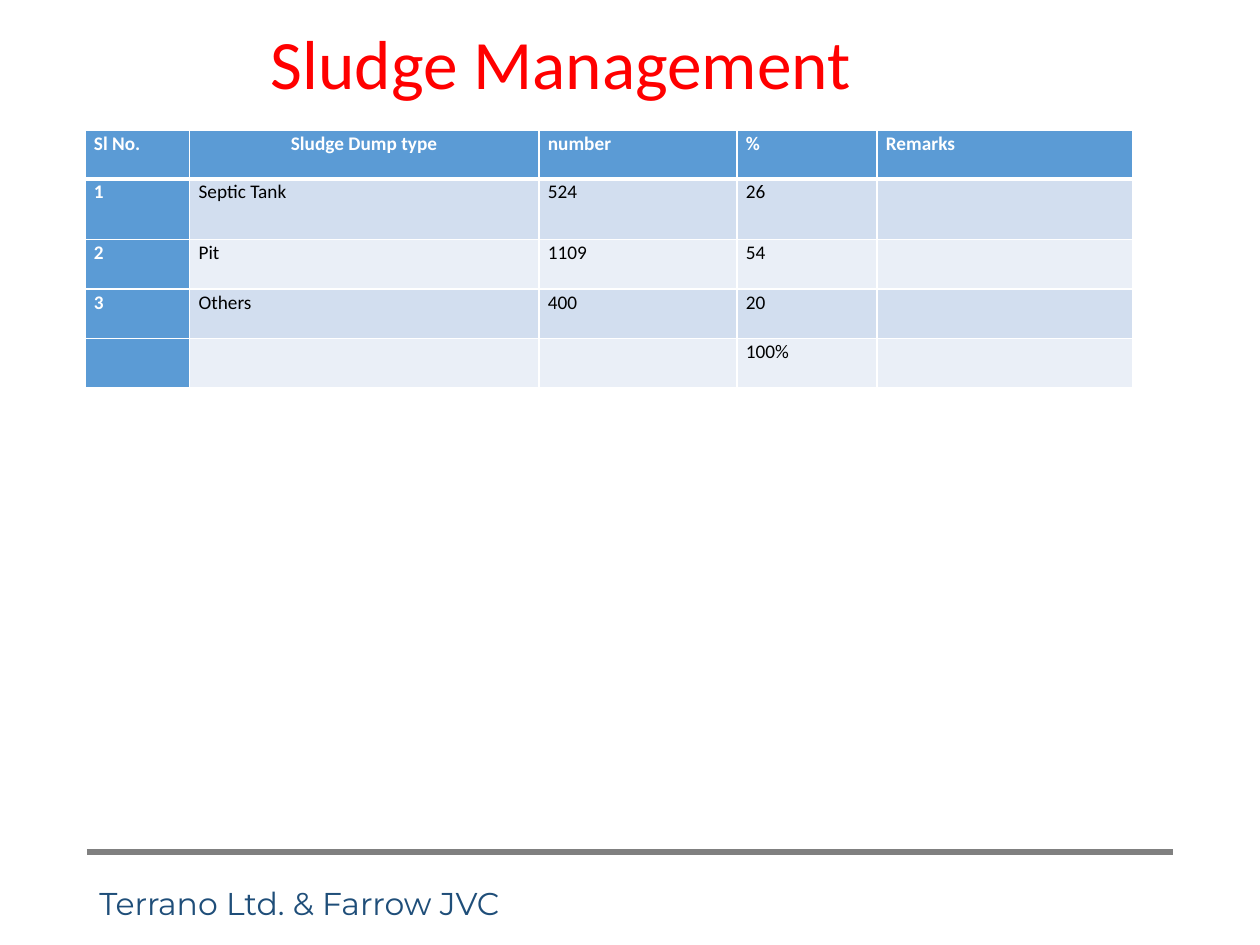
"""Build the sludge management slide with its table and footer."""
from dataclasses import dataclass
from lxml import etree
from pptx import Presentation
from pptx.dml.color import RGBColor
from pptx.enum.shapes import MSO_CONNECTOR
from pptx.enum.text import MSO_ANCHOR, MSO_AUTO_SIZE, PP_ALIGN
from pptx.oxml.ns import qn
from pptx.util import Pt

LEFT, MID = PP_ALIGN.LEFT, PP_ALIGN.CENTER
CENTER = MSO_ANCHOR.MIDDLE
FIXED = MSO_AUTO_SIZE.NONE
LINE = MSO_CONNECTOR.STRAIGHT


@dataclass(frozen=True)
class Theme:
    red: str = "FF0000"
    navy: str = "1F4E79"
    gray: str = "808080"
    blue: str = "5B9BD5"
    odd: str = "D2DEEF"
    even: str = "EAEFF7"
    white: str = "FFFFFF"
    black: str = "000000"
    sans: str = "Calibri"
    brand: str = "Montserrat"
    title: float = 39.6
    foot: float = 18
    cell: float = 11


def write(frame, text, name, size, color, bold=False, align=LEFT, space=1.0):
    para = frame.paragraphs[0]
    para.alignment, para.line_spacing = align, space
    run = para.add_run()
    run.text = text
    for key, value in {"name": name, "size": Pt(size), "bold": bold}.items():
        setattr(run.font, key, value)
    run.font.color.rgb = RGBColor.from_string(color)


def edge(cell, side, width, color):
    props = cell._tc.get_or_add_tcPr()
    line = etree.SubElement(props, qn(f"a:ln{side}"), w=str(Pt(width)))
    fill = etree.SubElement(line, qn("a:solidFill"))
    etree.SubElement(fill, qn("a:srgbClr"), val=color)


look = Theme()
deck = Presentation()
deck.slide_width, deck.slide_height = Pt(720), Pt(540)
slide = deck.slides.add_slide(deck.slide_layouts[5])
shapes = slide.shapes

rule = shapes.add_connector(LINE, Pt(49.7), Pt(486.7), Pt(670.3), Pt(486.7))
rule.line.width = Pt(3.25)
rule.line.color.rgb = RGBColor.from_string(look.gray)
etree.SubElement(rule._element.spPr, qn("a:effectLst"))

title = shapes.title
place = {"left": 147.6, "top": 16.6, "width": 356.4, "height": 43.9}
for key, value in place.items():
    setattr(title, key, Pt(value))
foot = shapes.add_textbox(Pt(49.7), Pt(496.8), Pt(388), Pt(38.2))
for box in (title, foot):
    setup = {"word_wrap": True, "auto_size": FIXED, "vertical_anchor": CENTER}
    for key, value in setup.items():
        setattr(box.text_frame, key, value)
write(title.text_frame, "Sludge Management", look.sans, look.title, look.red,
      space=0.9)
write(foot.text_frame, "Terrano Ltd. & Farrow JVC", look.brand, look.foot,
      look.navy)

rows = [
    ["Sl No.", "Sludge Dump type", "number", "%", "Remarks"],
    ["1", "Septic Tank", "524", "26", ""],
    ["2", "Pit", "1109", "54", ""],
    ["3", "Others", "400", "20", ""],
    ["", "", "", "100%", ""],
]
wide = [59.8, 199.6, 113.2, 80, 146.4]
high = [28, 34.8, 28.3, 28.3, 28.3]
grid = shapes.add_table(len(rows), len(wide), Pt(48.5), Pt(74.2),
                        Pt(sum(wide)), Pt(sum(high))).table
for col, width in zip(grid.columns, wide):
    col.width = Pt(width)
for row, height in zip(grid.rows, high):
    row.height = Pt(height)

pad = {"margin_left": Pt(5.2), "margin_right": Pt(5.2),
       "margin_top": 0, "margin_bottom": 0}
for r, row in enumerate(rows):
    for c, text in enumerate(row):
        cell = grid.cell(r, c)
        for key, value in pad.items():
            setattr(cell, key, value)
        thick = {"L": 1, "R": 1, "T": 3 if r == 1 else 1,
                 "B": 3 if r == 0 else 1}
        for side, width in thick.items():
            edge(cell, side, width, look.white)
        head = r == 0 or c == 0
        tint = look.blue if head else look.odd if r % 2 else look.even
        cell.fill.solid()
        cell.fill.fore_color.rgb = RGBColor.from_string(tint)
        if text:
            write(cell.text_frame, text, look.sans, look.cell,
                  look.white if head else look.black, head,
                  MID if (r, c) == (0, 1) else LEFT, 1.07)

deck.save("out.pptx")
